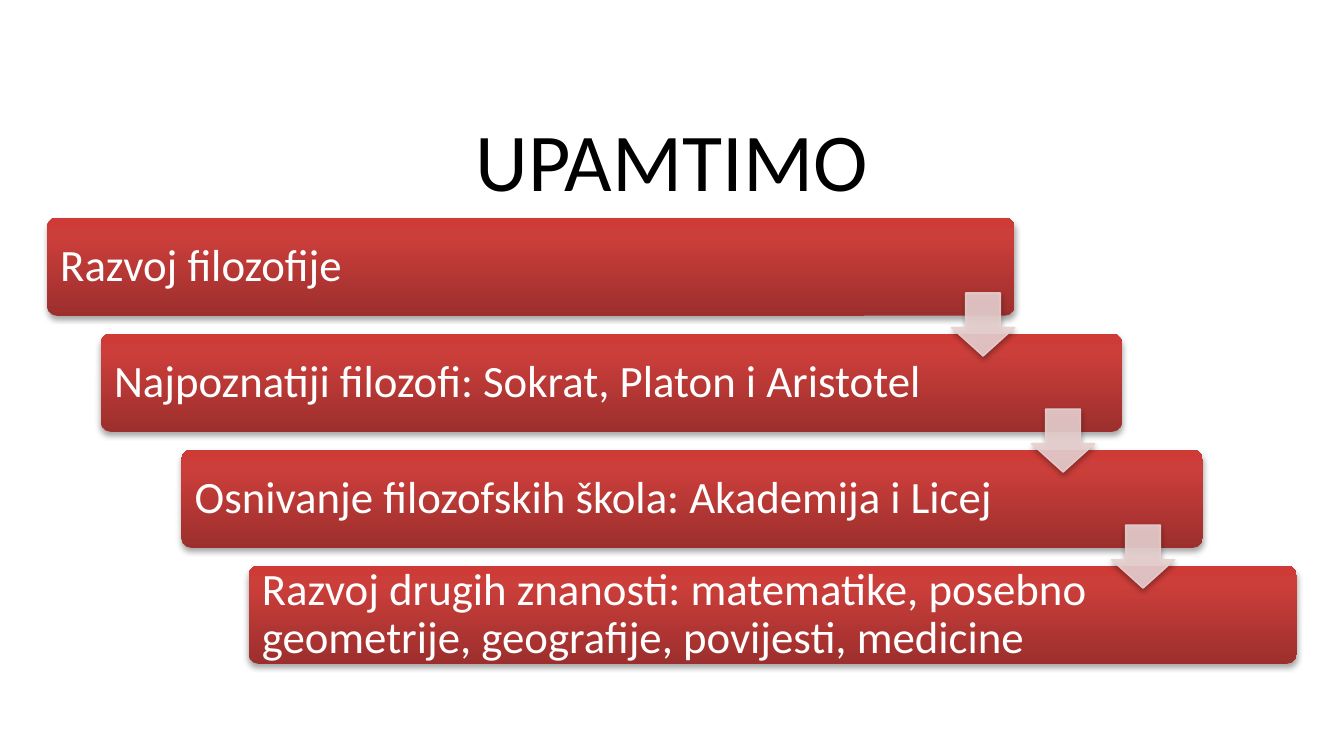
import lxml.etree
import pptx
import pptx.dml.color
import pptx.enum.shapes
import pptx.enum.text
import pptx.oxml.ns
import pptx.util

THEME = {
    "font": "Calibri",
    "title_size": 44,
    "step_size": 24,
    "title_color": "000000",
    "step_color": "FFFFFF",
    "bar_stops": [(0, "9C2F2D"), (80, "CB3E3A"), (100, "CE3B37")],
    "arrow_color": "E8D0D0",
    "arrow_opacity": 90,
    "shadow_color": "000000",
    "shadow_opacity": 35,
}
qn = pptx.oxml.ns.qn
shape_kinds = pptx.enum.shapes.MSO_SHAPE


def write_text(holder, words, size, color, align, inset):
    frame = holder.text_frame
    frame.text = words
    frame_format = {
        "word_wrap": True,
        "auto_size": pptx.enum.text.MSO_AUTO_SIZE.NONE,
        "vertical_anchor": pptx.enum.text.MSO_ANCHOR.MIDDLE,
        "margin_left": inset,
        "margin_right": inset,
        "margin_top": inset,
        "margin_bottom": inset,
    }
    for name, value in frame_format.items():
        setattr(frame, name, value)
    line = frame.paragraphs[0]
    line.alignment = align
    line.line_spacing = 0.9
    font_format = {"name": THEME["font"], "size": pptx.util.Pt(size), "bold": False}
    for name, value in font_format.items():
        setattr(line.runs[0].font, name, value)
    line.runs[0].font.color.rgb = pptx.dml.color.RGBColor.from_string(color)


def cast_shadow(shape):
    shape.shadow.inherit = False
    effects = shape._element.spPr.find(qn("a:effectLst"))
    shadow = lxml.etree.SubElement(
        effects, qn("a:outerShdw"), blurRad=str(pptx.util.Pt(3.1)),
        dist=str(pptx.util.Pt(1.8)), dir="5400000", rotWithShape="0")
    tint = lxml.etree.SubElement(shadow, qn("a:srgbClr"), val=THEME["shadow_color"])
    lxml.etree.SubElement(tint, qn("a:alpha"), val=str(THEME["shadow_opacity"] * 1000))


deck = pptx.Presentation()
deck.slide_width = pptx.util.Inches(10)
deck.slide_height = deck.slide_width * 9 // 16
slide = deck.slides.add_slide(deck.slide_layouts[5])

column = deck.slide_width / 200
row = pptx.util.Inches(2.59) // 3
first_row = pptx.util.Inches(1.62)
bar_height = pptx.util.Inches(0.73)
inset = pptx.util.Inches(0.1)

heading = slide.shapes.title
heading_place = {"left": int(10 * column), "top": pptx.util.Inches(0.84),
                 "width": int(180 * column), "height": pptx.util.Inches(0.78)}
for name, value in heading_place.items():
    setattr(heading, name, value)
write_text(heading, "UPAMTIMO", THEME["title_size"], THEME["title_color"],
           pptx.enum.text.PP_ALIGN.CENTER, inset)

steps = [
    ("Razvoj filozofije", 7, 144, 128),
    ("Najpoznatiji filozofi: Sokrat, Platon i Aristotel", 15, 152, 129),
    ("Osnivanje filozofskih škola: Akademija i Licej", 27, 152, 129.5),
    ("Razvoj drugih znanosti: matematike, posebno geometrije, geografije, "
     "povijesti, medicine", 37, 156, 132.5),
]
for index, (words, start, bar_span, text_span) in enumerate(steps):
    left, top = int(start * column), first_row + index * row
    bar = slide.shapes.add_shape(shape_kinds.ROUNDED_RECTANGLE, left, top,
                                 int(bar_span * column), bar_height)
    bar.adjustments[0] = 0.1
    bar.fill.gradient()
    bar.fill.gradient_angle = 90
    stops = bar._element.spPr.find(".//" + qn("a:gsLst"))
    stops.clear()
    for share, color in THEME["bar_stops"]:
        stop = lxml.etree.SubElement(stops, qn("a:gs"), pos=str(share * 1000))
        lxml.etree.SubElement(stop, qn("a:srgbClr"), val=color)
    bar.line.fill.background()
    cast_shadow(bar)
    label = slide.shapes.add_textbox(left, top, int(text_span * column), bar_height)
    write_text(label, words, THEME["step_size"], THEME["step_color"],
               pptx.enum.text.PP_ALIGN.LEFT, inset)

arrow_size = pptx.util.Inches(0.47)
for index in range(len(steps) - 1):
    arrow = slide.shapes.add_shape(
        shape_kinds.DOWN_ARROW, int((141.6 + 11.9 * index) * column),
        first_row + index * row + pptx.util.Inches(0.56), arrow_size, arrow_size)
    arrow.adjustments[0] = 0.55
    arrow.adjustments[1] = 0.45
    arrow.fill.solid()
    arrow.line.width = pptx.util.Pt(0.75)
    arrow.line.fill.solid()
    for paint in (arrow.fill, arrow.line.fill):
        paint.fore_color.rgb = pptx.dml.color.RGBColor.from_string(THEME["arrow_color"])
    for tint in arrow._element.spPr.findall(".//" + qn("a:srgbClr")):
        lxml.etree.SubElement(tint, qn("a:alpha"), val=str(THEME["arrow_opacity"] * 1000))
    cast_shadow(arrow)

deck.save("out.pptx")
